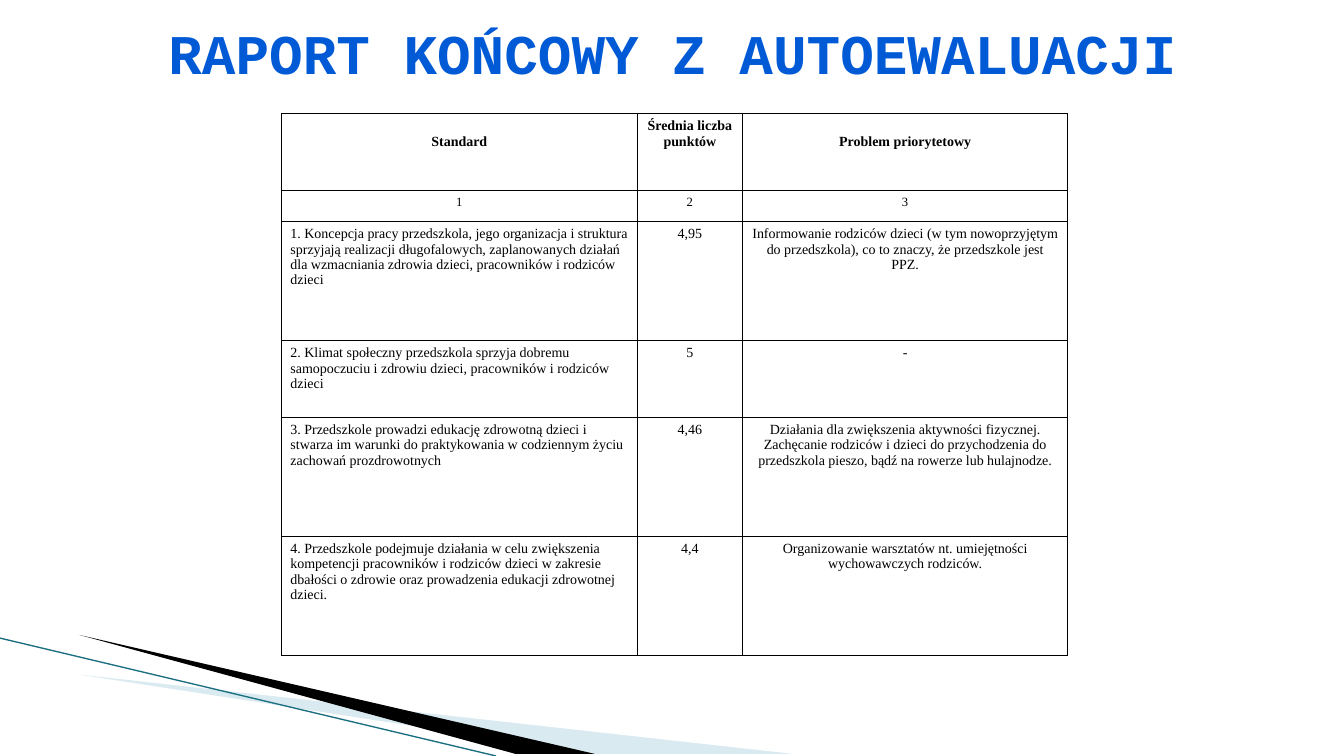
from dataclasses import dataclass

from lxml.etree import SubElement
from pptx import Presentation
from pptx.dml.color import RGBColor
from pptx.enum.shapes import MSO_CONNECTOR
from pptx.enum.text import MSO_ANCHOR, PP_ALIGN
from pptx.oxml import parse_xml
from pptx.oxml.ns import nsdecls, qn
from pptx.util import Cm, Pt


@dataclass(frozen=True)
class Theme:
    title_font: str = "Courier New"
    body_font: str = "Times New Roman"
    title: str = "005AD6"
    ink: str = "000000"
    pale: str = "A0CBDC"
    edge: str = "1A6F80"
    title_size: float = 40
    body_size: float = 10
    small_size: float = 9
    rule: float = 0.75
    edge_width: float = 0.95


THEME = Theme()

COLUMNS = [8.97, 2.65, 8.2]
ROW_HEIGHTS = [1.93, 0.79, 3, 1.93, 3, 3]
ROWS = [
    ("Standard", "Średnia liczba punktów", "Problem priorytetowy"),
    ("1", "2", "3"),
    ("1. Koncepcja pracy przedszkola, jego organizacja i struktura sprzyjają realizacji "
     "długofalowych, zaplanowanych działań dla wzmacniania zdrowia dzieci, pracowników "
     "i rodziców dzieci",
     "4,95",
     "Informowanie rodziców dzieci (w tym nowoprzyjętym do przedszkola), co to znaczy, "
     "że przedszkole jest PPZ."),
    ("2. Klimat społeczny przedszkola sprzyja dobremu samopoczuciu i zdrowiu dzieci, "
     "pracowników i rodziców dzieci",
     "5", "-"),
    ("3. Przedszkole prowadzi edukację zdrowotną dzieci i stwarza im warunki do "
     "praktykowania w codziennym życiu zachowań prozdrowotnych",
     "4,46",
     "Działania dla zwiększenia aktywności fizycznej. Zachęcanie rodziców i dzieci do "
     "przychodzenia do przedszkola pieszo, bądź na rowerze lub hulajnodze."),
    ("4. Przedszkole podejmuje działania w celu zwiększenia kompetencji pracowników "
     "i rodziców dzieci w zakresie dbałości o zdrowie oraz prowadzenia edukacji "
     "zdrowotnej dzieci.",
     "4,4",
     "Organizowanie warsztatów nt. umiejętności wychowawczych rodziców."),
]


def write(tf, text, font=THEME.body_font, size=THEME.body_size, color=THEME.ink,
          bold=False, align=PP_ALIGN.CENTER):
    tf.word_wrap = True
    p = tf.paragraphs[0]
    p.alignment = align
    r = p.add_run()
    r.text = text
    r.font.name = font
    r.font.size = Pt(size)
    r.font.bold = bold
    r.font.color.rgb = RGBColor.from_string(color)


def add_wedge(s, x, y, points, color, opacity=100):
    start, *rest = [(x + px, y + py) for px, py in points]
    builder = s.shapes.build_freeform(*start, scale=Cm(1))
    builder.add_line_segments(rest, close=True)
    sp = builder.convert_to_shape()
    sp.shadow.inherit = False
    sp.line.fill.background()
    sp.fill.solid()
    sp.fill.fore_color.rgb = RGBColor.from_string(color)
    if opacity < 100:
        clr = sp.fill._xPr.find(qn("a:solidFill"))[0]
        SubElement(clr, qn("a:alpha")).set("val", str(opacity * 1000))


def add_corner(s, x, y, h):
    # Two wedges and the thin edge line along them
    add_wedge(s, x, y, [(1.85, 0.44), (20.14, h), (15.44, h)], THEME.pale, 40)
    add_wedge(s, x, y, [(1.8, 0.4), (15.47, h), (12.6, h)], THEME.ink)
    edge = s.shapes.add_connector(MSO_CONNECTOR.STRAIGHT, Cm(x), Cm(y), Cm(x + 12.5), Cm(y + h))
    edge.line.color.rgb = RGBColor.from_string(THEME.edge)
    edge.line.width = Pt(THEME.edge_width)
    SubElement(edge._element.spPr, qn("a:effectLst"))


def add_title(s, x, y, w, h):
    box = s.shapes.add_textbox(Cm(x), Cm(y), Cm(w), Cm(h))
    write(box.text_frame, "RAPORT KOŃCOWY Z AUTOEWALUACJI", font=THEME.title_font,
          size=THEME.title_size, color=THEME.title, bold=True)


def set_borders(cell):
    tc_pr = cell._tc.get_or_add_tcPr()
    for i, side in enumerate(("lnL", "lnR", "lnT", "lnB")):
        tc_pr.insert(i, parse_xml(
            f'<a:{side} {nsdecls("a")} w="{Pt(THEME.rule)}"><a:solidFill>'
            f'<a:srgbClr val="{THEME.ink}"/></a:solidFill></a:{side}>'))


def add_report(s, x, y):
    table = s.shapes.add_table(len(ROWS), len(COLUMNS), Cm(x), Cm(y),
                               Cm(sum(COLUMNS)), Cm(sum(ROW_HEIGHTS))).table
    table.first_row = table.horz_banding = False
    for column, width in zip(table.columns, COLUMNS):
        column.width = Cm(width)
    for row, height in zip(table.rows, ROW_HEIGHTS):
        row.height = Cm(height)
    for i, texts in enumerate(ROWS):
        for j, text in enumerate(texts):
            cell = table.cell(i, j)
            cell.fill.background()
            set_borders(cell)
            cell.vertical_anchor = MSO_ANCHOR.TOP
            cell.margin_left = cell.margin_right = Cm(0.23)
            # The one-line headings sit level with the second line of the middle one
            cell.margin_top = Cm(0.51 if i == 0 and j != 1 else 0.11)
            cell.margin_bottom = Cm(0.11)
            write(cell.text_frame, text, bold=i == 0,
                  size=THEME.small_size if i == 1 else THEME.body_size,
                  align=PP_ALIGN.LEFT if i > 1 and j == 0 else PP_ALIGN.CENTER)


def main():
    prs = Presentation()
    prs.slide_width, prs.slide_height = Cm(33.87), Cm(19.05)
    s = prs.slides.add_slide(prs.slide_layouts[6])
    add_corner(s, 0, 16.08, 2.97)
    add_report(s, 7.09, 2.87)
    add_title(s, 0, 0.33, 33.87, 1.96)
    prs.save("out.pptx")


if __name__ == "__main__":
    main()
